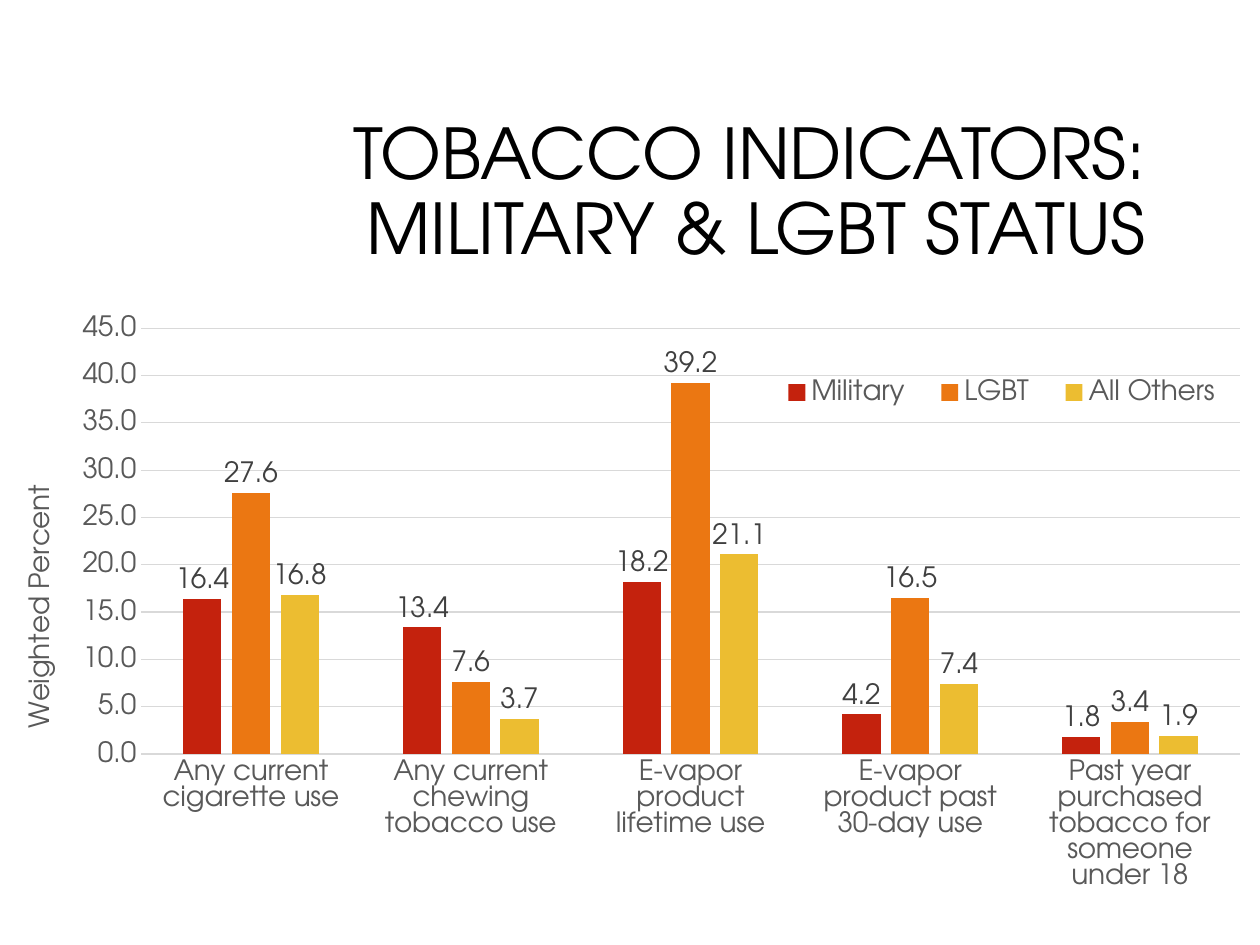
import pptx
import pptx.chart.data
import pptx.dml.color
import pptx.enum.chart
import pptx.enum.text
import pptx.oxml
import pptx.oxml.ns
import pptx.util

Cm = pptx.util.Cm
Pt = pptx.util.Pt

CATEGORIES = [
    "Any current cigarette use",
    "Any current chewing tobacco use",
    "E-vapor product lifetime use",
    "E-vapor product past 30-day use",
    "Past year purchased tobacco for someone under 18",
]
SERIES = [
    ("Military ", "C4220D", (16.4, 13.4, 18.2, 4.2, 1.8)),
    ("LGBT ", "EB7712", (27.6, 7.6, 39.2, 16.5, 3.4)),
    ("All Others", "ECBD31", (16.8, 3.7, 21.1, 7.4, 1.9)),
]


def color(value):
    return pptx.dml.color.RGBColor.from_string(value)


def assign(target, values):
    for name, value in values.items():
        setattr(target, name, value)


def place(element, **fractions):
    for old in element.xpath("c:layout"):
        element.remove(old)
    modes = "".join(f'<c:{axis}Mode val="edge"/>' for axis in "xy")
    target = '<c:layoutTarget val="inner"/>' if element.tag.endswith("plotArea") else ""
    values = "".join(f'<c:{key} val="{value}"/>' for key, value in fractions.items())
    layout = pptx.oxml.parse_xml(
        f'<c:layout {pptx.oxml.ns.nsdecls("c")}><c:manualLayout>'
        f"{target}{modes}{values}</c:manualLayout></c:layout>"
    )
    overlays = element.xpath("c:overlay")
    if overlays:
        overlays[0].addprevious(layout)
    else:
        element.insert(0, layout)


class SlideBuilder:
    typeface = "TeX Gyre Adventor"
    text_color = "595959"
    label_color = "404040"
    grid_color = "D9D9D9"

    def __init__(self, deck):
        self.page = deck.slides.add_slide(deck.slide_layouts[6])

    def style(self, font, size, value):
        assign(font, {"name": self.typeface, "size": Pt(size), "bold": False})
        font.color.rgb = color(value)

    def rule(self, line):
        line.color.rgb = color(self.grid_color)
        line.width = Pt(0.75)

    def title(self, lines, left, top, width, height):
        box = self.page.shapes.add_textbox(Cm(left), Cm(top), Cm(width), Cm(height))
        assign(box.text_frame, {
            "word_wrap": True,
            "vertical_anchor": pptx.enum.text.MSO_ANCHOR.MIDDLE,
            "margin_right": Cm(0.65),
        })
        para = box.text_frame.paragraphs[0]
        assign(para, {"alignment": pptx.enum.text.PP_ALIGN.RIGHT, "line_spacing": 0.9})
        for index, text in enumerate(lines):
            if index:
                para.add_line_break()
            span = para.add_run()
            span.text = text
            self.style(span.font, 40, "000000")

    def column_chart(self, left, top, width, height):
        data = pptx.chart.data.CategoryChartData(number_format="0.0")
        data.categories = CATEGORIES
        for name, _, values in SERIES:
            data.add_series(name, values)
        chart = self.page.shapes.add_chart(
            pptx.enum.chart.XL_CHART_TYPE.COLUMN_CLUSTERED,
            Cm(left), Cm(top), Cm(width), Cm(height), data,
        ).chart
        chart.has_title = False
        self.style(chart.font, 16, self.text_color)
        plot = chart.plots[0]
        assign(plot, {"gap_width": 219, "overlap": -27, "vary_by_categories": False})
        for series, (_, fill, _) in zip(plot.series, SERIES):
            series.format.fill.solid()
            series.format.fill.fore_color.rgb = color(fill)
            labels = series.data_labels
            assign(labels, {
                "show_value": True,
                "position": pptx.enum.chart.XL_LABEL_POSITION.OUTSIDE_END,
                "number_format": "0.0",
                "number_format_is_linked": False,
            })
            self.style(labels.font, 16, self.label_color)
        self.axes(chart)
        self.legend(chart)
        place(chart.element.xpath("c:chart/c:plotArea")[0], x=0.112, y=0.04, w=0.872, h=0.663)

    def axes(self, chart):
        for axis in (chart.category_axis, chart.value_axis):
            axis.major_tick_mark = pptx.enum.chart.XL_TICK_MARK.NONE
            self.style(axis.tick_labels.font, 16, self.text_color)
        self.rule(chart.category_axis.format.line)
        scale = chart.value_axis
        assign(scale, {
            "minimum_scale": 0,
            "maximum_scale": 45,
            "major_unit": 5,
            "has_major_gridlines": True,
        })
        self.rule(scale.major_gridlines.format.line)
        scale.format.line.fill.background()
        assign(scale.tick_labels, {"number_format": "0.0", "number_format_is_linked": False})
        frame = scale.axis_title.text_frame
        frame.text = "Weighted Percent"
        self.style(frame.paragraphs[0].runs[0].font, 16, self.text_color)
        heading = chart.element.xpath(".//c:valAx/c:title")[0]
        heading.xpath(".//a:bodyPr")[0].set("rot", "-5400000")
        place(heading, x=0.016, y=0.276)

    def legend(self, chart):
        chart.has_legend = True
        assign(chart.legend, {
            "position": pptx.enum.chart.XL_LEGEND_POSITION.BOTTOM,
            "include_in_layout": True,
        })
        self.style(chart.legend.font, 16, self.text_color)
        place(chart.element.xpath("c:chart/c:legend")[0], x=0.61, y=0.1, w=0.37, h=0.08)


def main():
    deck = pptx.Presentation()
    assign(deck, {"slide_width": Cm(25.4), "slide_height": Cm(19.05)})
    builder = SlideBuilder(deck)
    builder.title(["TOBACCO INDICATORS:", "MILITARY & LGBT STATUS"], 6.05, 2.13, 17.7, 3.58)
    builder.column_chart(0, 6.1, 25.4, 12.95)
    deck.save("out.pptx")


if __name__ == "__main__":
    main()
